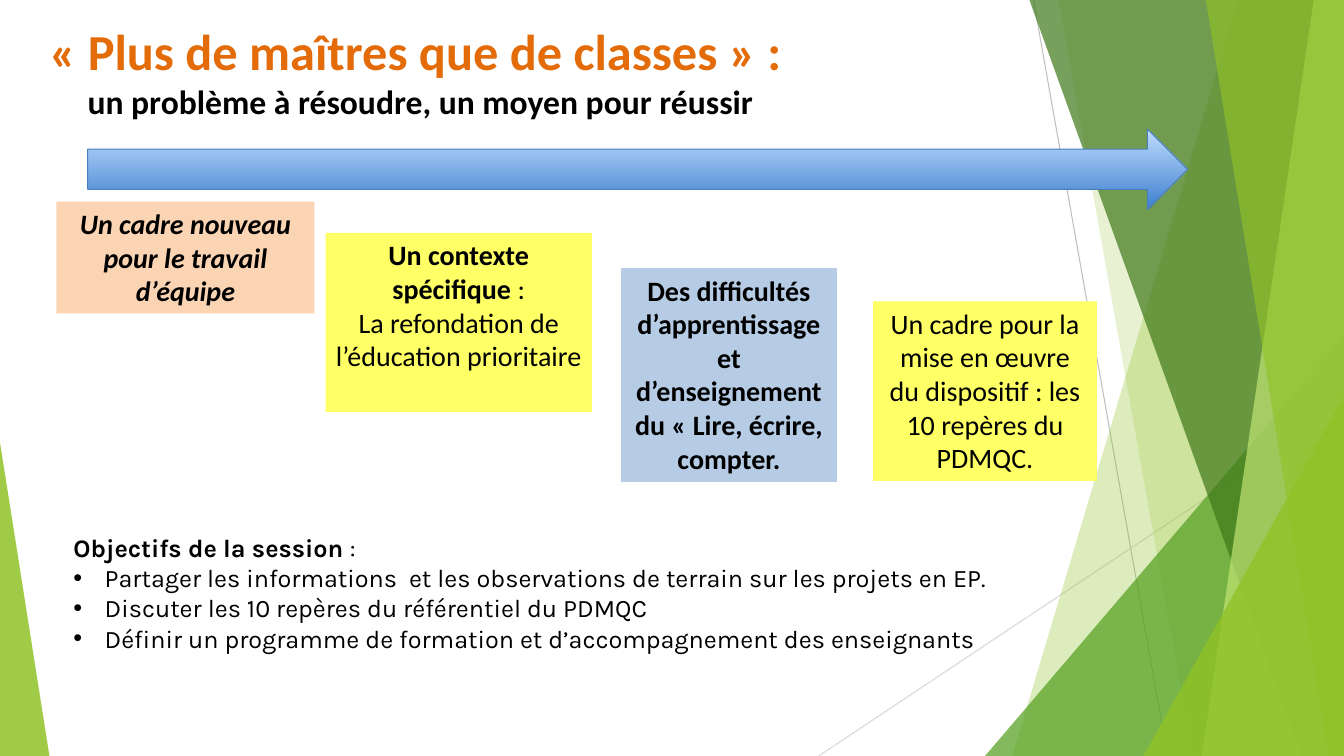
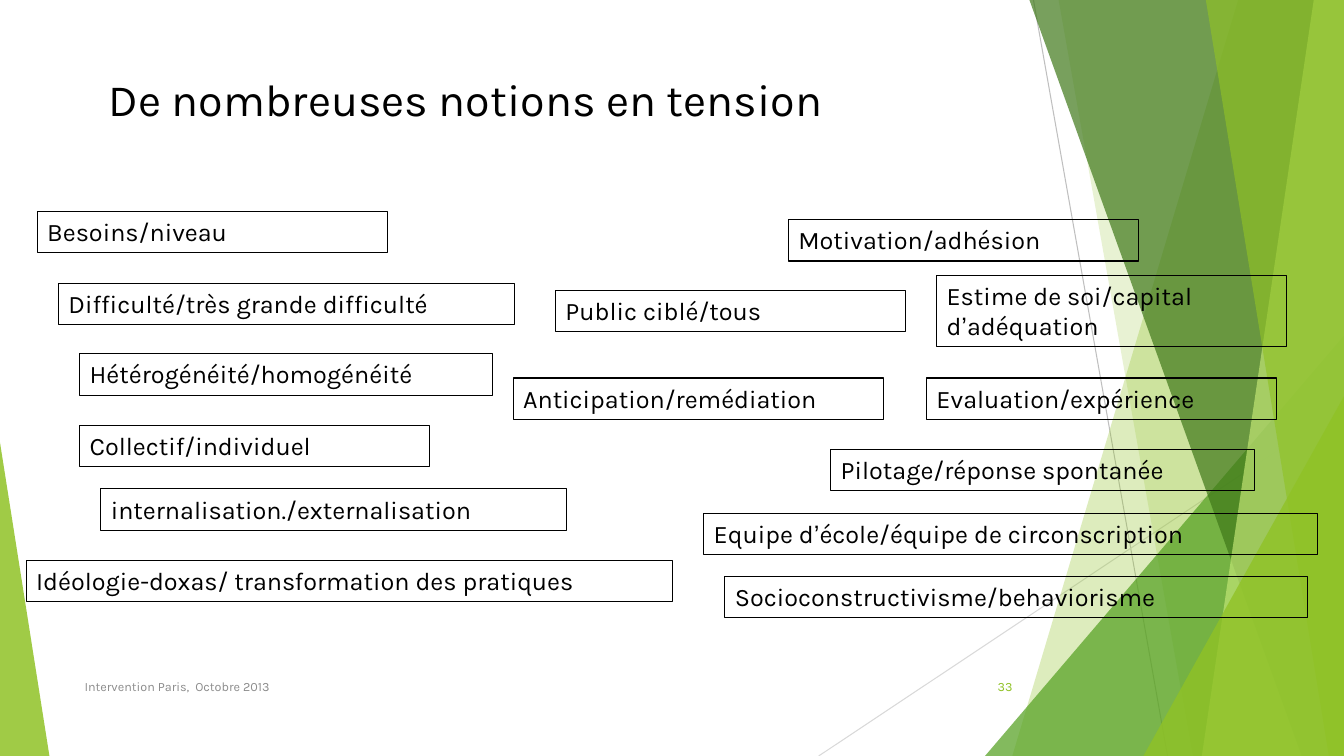
from lxml import etree
from pptx import Presentation
from pptx.dml.color import RGBColor
from pptx.enum import shapes, text
from pptx.oxml import ns
from pptx.util import Inches, Pt

WIDTH, HEIGHT = 13.33, 7.5
BLACK, GREEN, DARK_GREEN = "000000", "90C226", "3F7819"
MID_GREEN, LIGHT_GREEN, ORANGE = "54A021", "C0E474", "E36C09"
YELLOW, BLUE, PEACH = "FFFF66", "B6CBE4", "FBD4B4"
GREY = "8C8C8C"
CENTER, RIGHT = text.PP_ALIGN.CENTER, text.PP_ALIGN.RIGHT
BOLD = {"bold": True}


def paint(fill, colour, opacity=100):
    """Make a shape, line or font fill solid; opacity is in percent."""
    fill.solid()
    fill.fore_color.rgb = RGBColor.from_string(colour)
    if opacity < 100:
        rgb = fill._xPr.find(".//" + ns.qn("a:srgbClr"))
        etree.SubElement(rgb, ns.qn("a:alpha"), val=str(opacity * 1000))


def add_text(slide, place, paragraphs, size, font="Karla", colour=BLACK, align=None):
    """Add a text box; a paragraph is a list of (text, style) runs."""
    box = slide.shapes.add_textbox(*map(Inches, place))
    frame = box.text_frame
    frame.word_wrap = True
    for number, runs in enumerate(paragraphs):
        paragraph = frame.paragraphs[0] if number == 0 else frame.add_paragraph()
        paragraph.alignment = align
        for words, style in runs:
            run = paragraph.add_run()
            run.text = words
            run.font.name = style.get("font", font)
            run.font.size = Pt(style.get("size", size))
            run.font.bold = style.get("bold", False)
            run.font.italic = style.get("italic", False)
            paint(run.font.fill, style.get("colour", colour))
    return box


deck = Presentation()
deck.slide_width, deck.slide_height = Inches(WIDTH), Inches(HEIGHT)
plan, tensions = [deck.slides.add_slide(deck.slide_layouts[6]) for _ in range(2)]

# Shared background: thin lines, then translucent facets from back to front
rays = [(10.25, 0, 11.58, HEIGHT, "BFBFBF"), (WIDTH, 4.03, 8.12, HEIGHT, "D9D9D9")]
# A band is (top left x, bottom left x) and reaches the right edge;
# a triangle is (left, top, width, apex position) and reaches the bottom edge.
facets = [
    ((12.28, 10.04), GREEN, 30),
    ((10.5, 11.83), GREEN, 20),
    ((9.77, 3.33, 3.56, 1), MID_GREEN, 72),
    ((10.21, 12.91), DARK_GREEN, 70),
    ((13.03, 11.92), LIGHT_GREEN, 70),
    ((11.96, 13.18), GREEN, 65),
    ((11.34, 3.93, 1.99, 1), GREEN, 80),
    ((0, 4.39, 0.49, 0), GREEN, 85),
]
for slide in (plan, tensions):
    for *ends, colour in rays:
        ray = slide.shapes.add_connector(
            shapes.MSO_CONNECTOR.STRAIGHT, *map(Inches, ends))
        paint(ray.line.fill, colour)
        ray.line.width = Pt(0.75)
        etree.SubElement(ray._element.spPr, ns.qn("a:effectLst"))
    for outline, colour, opacity in facets:
        if len(outline) == 2:
            top_x, bottom_x = outline
            builder = slide.shapes.build_freeform(
                Inches(top_x), 0, scale=1.0)
            corners = [(WIDTH, 0), (WIDTH, HEIGHT), (bottom_x, HEIGHT)]
            builder.add_line_segments([(Inches(x), Inches(y)) for x, y in corners])
            facet = builder.convert_to_shape()
        else:
            left, top, width, apex = outline
            facet = slide.shapes.add_shape(
                shapes.MSO_SHAPE.ISOSCELES_TRIANGLE,
                *map(Inches, (left, top, width, HEIGHT - top)))
            facet.adjustments[0] = apex
        paint(facet.fill, colour, opacity)
        facet.line.fill.background()
        facet.shadow.inherit = False

# Slide 1: the session plan
arrow = plan.shapes.add_shape(
    shapes.MSO_SHAPE.RIGHT_ARROW, *map(Inches, (0.87, 1.28, 10.91, 0.8)))
arrow.shadow.inherit = False
arrow.fill.gradient()
arrow.fill.gradient_angle = 270
for stop, colour in zip(arrow.fill.gradient_stops, ("BFDCFF", "3E7FCE")):
    stop.color.rgb = RGBColor.from_string(colour)
paint(arrow.line.fill, "4A7DBB")
arrow.line.width = Pt(0.75)

heading = add_text(plan, (0.39, 0.15, 11.68, 1.11), [
    [("« Plus de maîtres que de classes » :", {"size": 36, "colour": ORANGE, **BOLD})],
    [("un problème à résoudre, un moyen pour réussir", BOLD)],
], 24, "Calibri")
subtitle = heading.text_frame.paragraphs[1]
subtitle._p.get_or_add_pPr().set("marL", str(Inches(0.38)))

steps = [
    ((3.23, 2.31, 2.64, 1.78), YELLOW, [
        [("Un contexte spécifique ", BOLD), (":", {})],
        [("La refondation de l’éducation prioritaire", {})]]),
    ((8.66, 2.99, 2.22, 1.78), YELLOW, [
        [("Un cadre pour la mise en œuvre du dispositif : les 10 repères du PDMQC.", {})]]),
    ((6.16, 2.66, 2.14, 2.12), BLUE, [
        [("Des difficultés d’apprentissage et d’enseignement du « Lire, écrire, compter.",
          BOLD)]]),
    ((0.56, 2, 2.56, 1.11), PEACH, [
        [("Un cadre nouveau pour le travail d’équipe", {"italic": True, **BOLD})]]),
]
for place, colour, paragraphs in steps:
    step = add_text(plan, place, paragraphs, 20, "Calibri", align=CENTER)
    paint(step.fill, colour)

goals = add_text(plan, (0.63, 5.23, 10.95, 1.31), [
    [("Objectifs de la session ", BOLD), (":", {})],
    [("Partager les informations  et les observations de terrain sur les projets en EP.", {})],
    [("Discuter les 10 repères du référentiel du PDMQC", {})],
    [("Définir un programme de formation et d’accompagnement des enseignants", {})],
], 18)
for goal in goals.text_frame.paragraphs[1:]:
    properties = goal._p.get_or_add_pPr()
    properties.set("marL", str(Inches(0.31)))
    properties.set("indent", str(Inches(-0.31)))
    etree.SubElement(properties, ns.qn("a:buFont"), typeface="Arial")
    etree.SubElement(properties, ns.qn("a:buChar"), char="•")

# Slide 2: notions in tension
footer = add_text(tensions, (0.74, 6.61, 6.89, 0.4),
                  [[("Intervention Paris,  Octobre 2013", {})]], 9, colour=GREY)
page_number = add_text(tensions, (9.39, 6.61, 0.75, 0.4),
                       [[("33", {})]], 9, colour=GREEN, align=RIGHT)
for note in (footer, page_number):
    note.text_frame.vertical_anchor = text.MSO_ANCHOR.MIDDLE

notions = [
    (0.58, 2.81, 4.52, "Difficulté/très grande difficulté"),
    (0.37, 2.1, 3.47, "Besoins/niveau"),
    (0.79, 3.51, 4.09, "Hétérogénéité/homogénéité"),
    (0.79, 4.22, 3.47, "Collectif/individuel"),
    (1, 4.85, 4.62, "internalisation./externalisation"),
    (8.24, 4.46, 4.2, "Pilotage/réponse spontanée"),
    (9.19, 3.75, 3.47, "Evaluation/expérience"),
    (9.29, 2.73, 3.47, "Estime de soi/capital d’adéquation"),
    (7.82, 2.18, 3.47, "Motivation/adhésion"),
    (6.98, 5.09, 6.09, "Equipe d’école/équipe de circonscription"),
    (0.26, 5.56, 6.41, "Idéologie-doxas/ transformation des pratiques"),
    (7.19, 5.72, 5.78, "Socioconstructivisme/behaviorisme"),
    (5.51, 2.88, 3.47, "Public ciblé/tous"),
    (5.09, 3.75, 3.67, "Anticipation/remédiation"),
]
for left, top, width, words in notions:
    height = 0.71 if words.startswith("Estime") else 0.41  # wraps to two lines
    before, apostrophe, after = words.partition("’")
    runs = [(before, {})]
    if apostrophe:
        runs += [(apostrophe, {"font": "Arial"}), (after, {})]
    notion = add_text(tensions, (left, top, width, height), [runs], 18)
    paint(notion.line.fill, BLACK)
    notion.line.width = Pt(0.75)

add_text(tensions, (0.98, 0.66, 8.04, 0.64),
         [[("De nombreuses notions en tension", {})]], 32)

deck.save("out.pptx")
